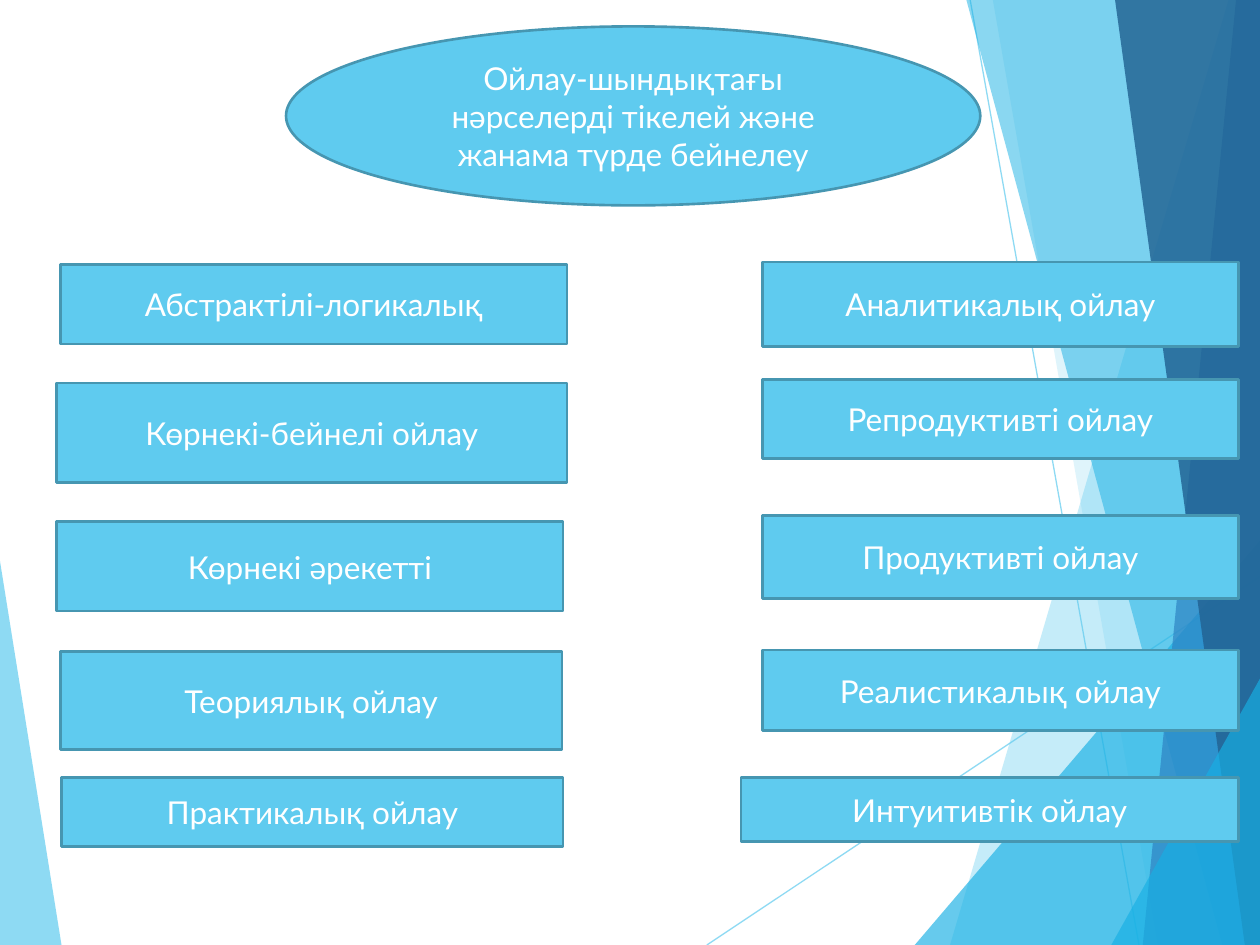
from pptx import Presentation
from pptx.dml.color import RGBColor
from pptx.enum.shapes import MSO_CONNECTOR, MSO_SHAPE
from pptx.enum.text import MSO_ANCHOR, PP_ALIGN
from pptx.oxml.ns import qn
from pptx.util import Inches, Pt
from lxml import etree

RECT, OVAL = MSO_SHAPE.RECTANGLE, MSO_SHAPE.OVAL
STRAIGHT = MSO_CONNECTOR.STRAIGHT
MIDDLE, CENTER = MSO_ANCHOR.MIDDLE, PP_ALIGN.CENTER

COLORS = {
    "sky": "5FCBEF",
    "cyan": "17B0E4",
    "blue": "2E83C3",
    "navy": "226292",
    "edge": "4696B1",
    "white": "FFFFFF",
}


class Deck:
    font = "Lato"
    size = Pt(18)

    def __init__(self, slide):
        self.slide = slide
        self.shapes = slide.shapes

    def color(self, name):
        return RGBColor.from_string(COLORS[name])

    def fade(self, shape, alpha):
        """Set the opacity, in percent, of every colour of a shape."""
        for node in shape._element.spPr.iter(qn("a:srgbClr")):
            etree.SubElement(node, qn("a:alpha")).set("val", str(alpha * 1000))

    def facet(self, name, alpha, points):
        pts = [(Inches(x), Inches(y)) for x, y in points]
        form = self.shapes.build_freeform(*pts[0], scale=1.0)
        form.add_line_segments(pts[1:], close=True)
        shape = form.convert_to_shape()
        shape.shadow.inherit = False
        shape.fill.solid()
        shape.fill.fore_color.rgb = self.color(name)
        shape.line.fill.background()
        self.fade(shape, alpha)

    def ray(self, x1, y1, x2, y2):
        line = self.shapes.add_connector(
            STRAIGHT, Inches(x1), Inches(y1), Inches(x2), Inches(y2))
        line.line.color.rgb = self.color("sky")
        line.line.width = Pt(0.75)
        self.fade(line, 70)
        etree.SubElement(line._element.spPr, qn("a:effectLst"))

    def box(self, kind, text, x, y, w, h):
        shape = self.shapes.add_shape(
            kind, Inches(x), Inches(y), Inches(w), Inches(h))
        shape.shadow.inherit = False
        shape.fill.solid()
        shape.fill.fore_color.rgb = self.color("sky")
        shape.line.color.rgb = self.color("edge")
        shape.line.width = Pt(1.5)
        frame = shape.text_frame
        frame.word_wrap = True
        frame.vertical_anchor = MIDDLE
        para = frame.paragraphs[0]
        para.alignment = CENTER
        run = para.add_run()
        run.text = text
        run.font.name = self.font
        run.font.size = self.size
        run.font.color.rgb = self.color("white")


# Facets on the right edge: colour, opacity, outline
FACETS = [
    ("sky", 36, [(9.75, 0), (7.54, 7.5), (10.02, 7.5), (10.01, 0)]),
    ("sky", 20, [(7.88, 0), (9.19, 7.5), (10.01, 7.5), (10.01, 0)]),
    ("cyan", 66, [(7.26, 7.5), (10, 4.29), (10.01, 7.5)]),
    ("cyan", 50, [(7.67, 0), (9.7, 7.5), (10.01, 7.5), (10.01, 0)]),
    ("blue", 70, [(9.81, 0), (9.07, 7.5), (10.01, 7.5), (10, 0)]),
    ("navy", 82, [(8.85, 0), (9.88, 7.5), (10.02, 7.5), (10, 0)]),
    ("cyan", 66, [(8.82, 7.5), (10.02, 5.35), (10.02, 7.5)]),
]

# Kinds of thinking: text, left, top, width, height
LEFT = [
    ("Абстрактілі-логикалық", 0.48, 2.1, 4.02, 0.63),
    ("Көрнекі-бейнелі ойлау", 0.45, 3.04, 4.05, 0.79),
    ("Көрнекі әрекетті", 0.45, 4.14, 4.02, 0.71),
    ("Теориялық ойлау", 0.48, 5.17, 3.98, 0.78),
    ("Практикалық ойлау", 0.49, 6.17, 3.98, 0.55),
]

# Right column shares its right edge: text, left, top, height
EDGE = 9.83
RIGHT = [
    ("Аналитикалық ойлау", 6.05, 2.08, 0.67),
    ("Репродуктивті ойлау", 6.05, 3.01, 0.63),
    ("Продуктивті ойлау", 6.05, 4.09, 0.66),
    ("Реалистикалық ойлау", 6.05, 5.16, 0.64),
    ("Интуитивтік ойлау", 5.88, 6.17, 0.51),
]


def main():
    prs = Presentation()
    prs.slide_width, prs.slide_height = Inches(10), Inches(7.5)
    deck = Deck(prs.slides.add_slide(prs.slide_layouts[6]))

    # Backdrop
    deck.facet("sky", 70, [(-0.01, 4.39), (0.49, 7.51), (-0.01, 7.5)])
    deck.ray(5.61, 7.5, 10.01, 4.57)
    deck.ray(7.7, 0, 9.04, 7.5)
    for name, alpha, points in FACETS:
        deck.facet(name, alpha, points)

    # Definition
    deck.box(OVAL, "Ойлау-шындықтағы нәрселерді тікелей және "
             "жанама түрде бейнелеу", 2.27, 0.21, 5.51, 1.42)

    # Two columns
    for text, x, y, w, h in LEFT:
        deck.box(RECT, text, x, y, w, h)
    for text, x, y, h in RIGHT:
        deck.box(RECT, text, x, y, EDGE - x, h)

    prs.save("out.pptx")


if __name__ == "__main__":
    main()
